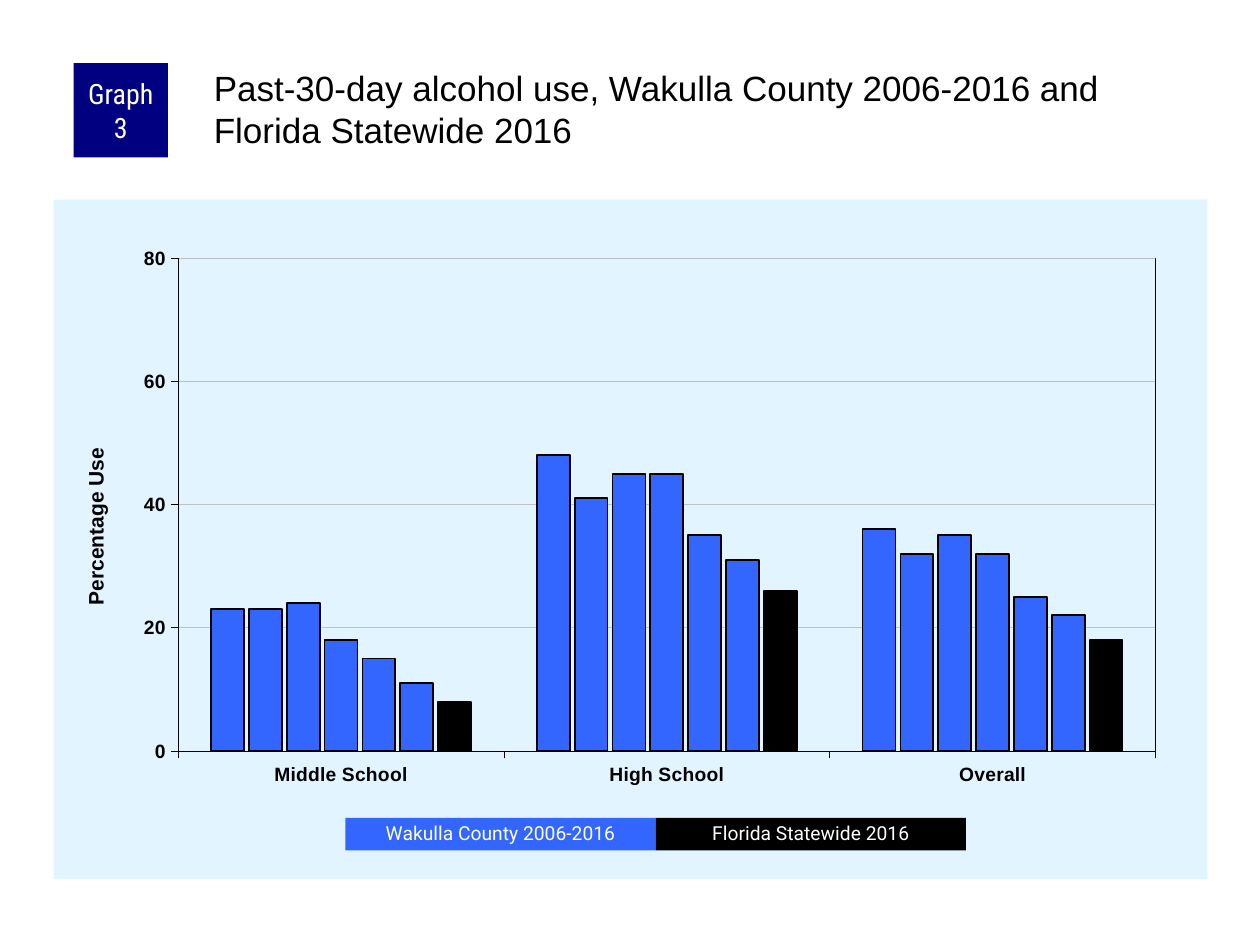
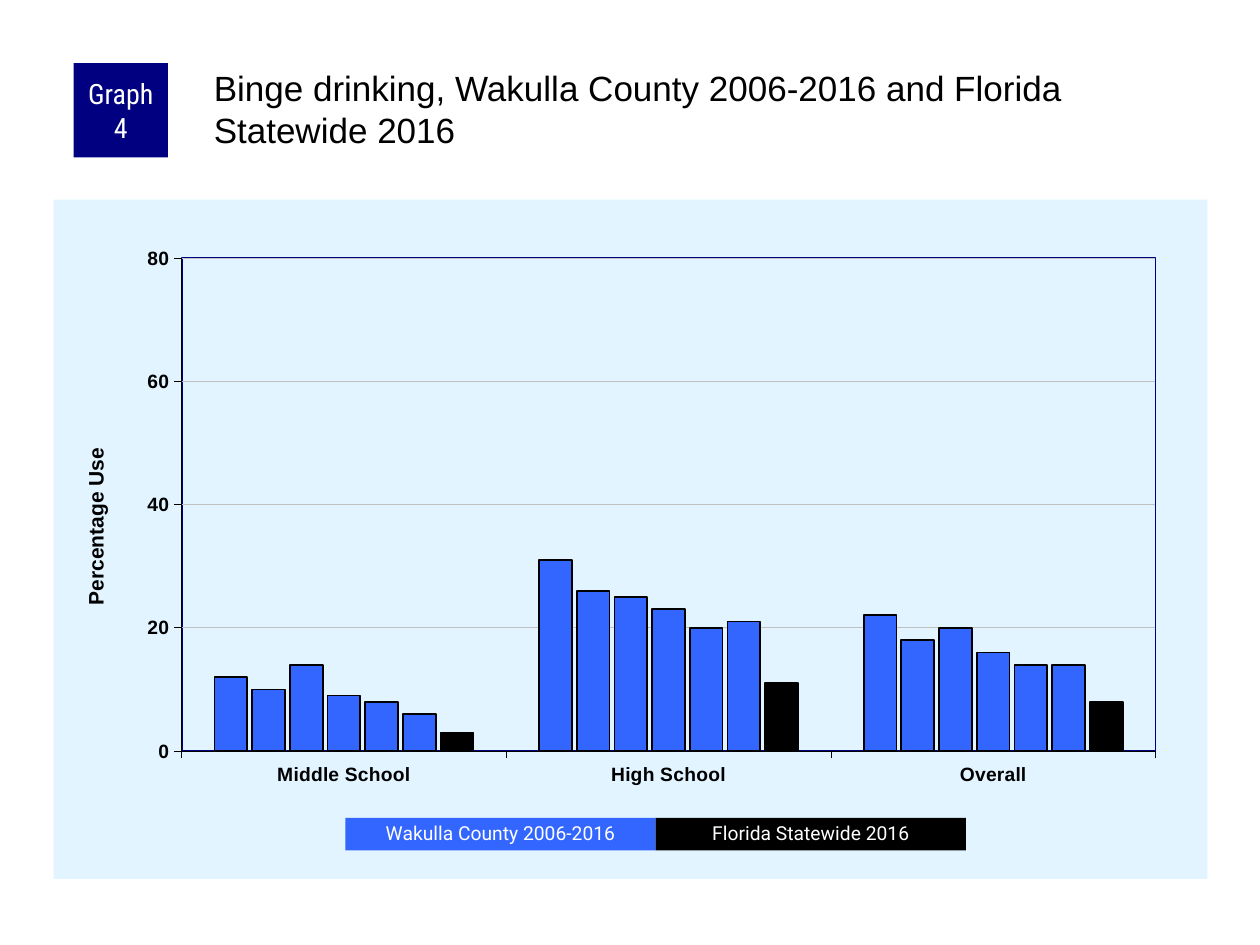
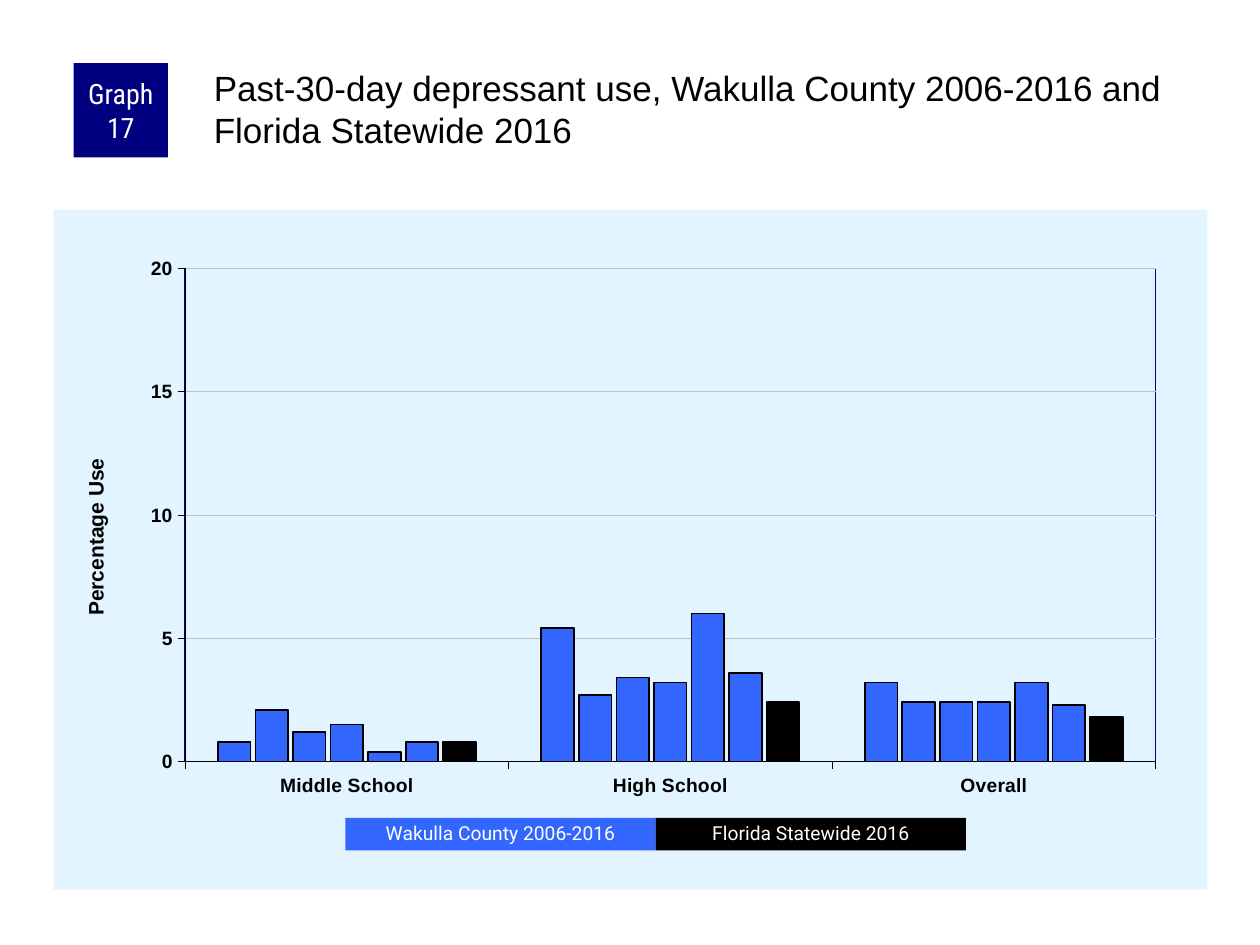
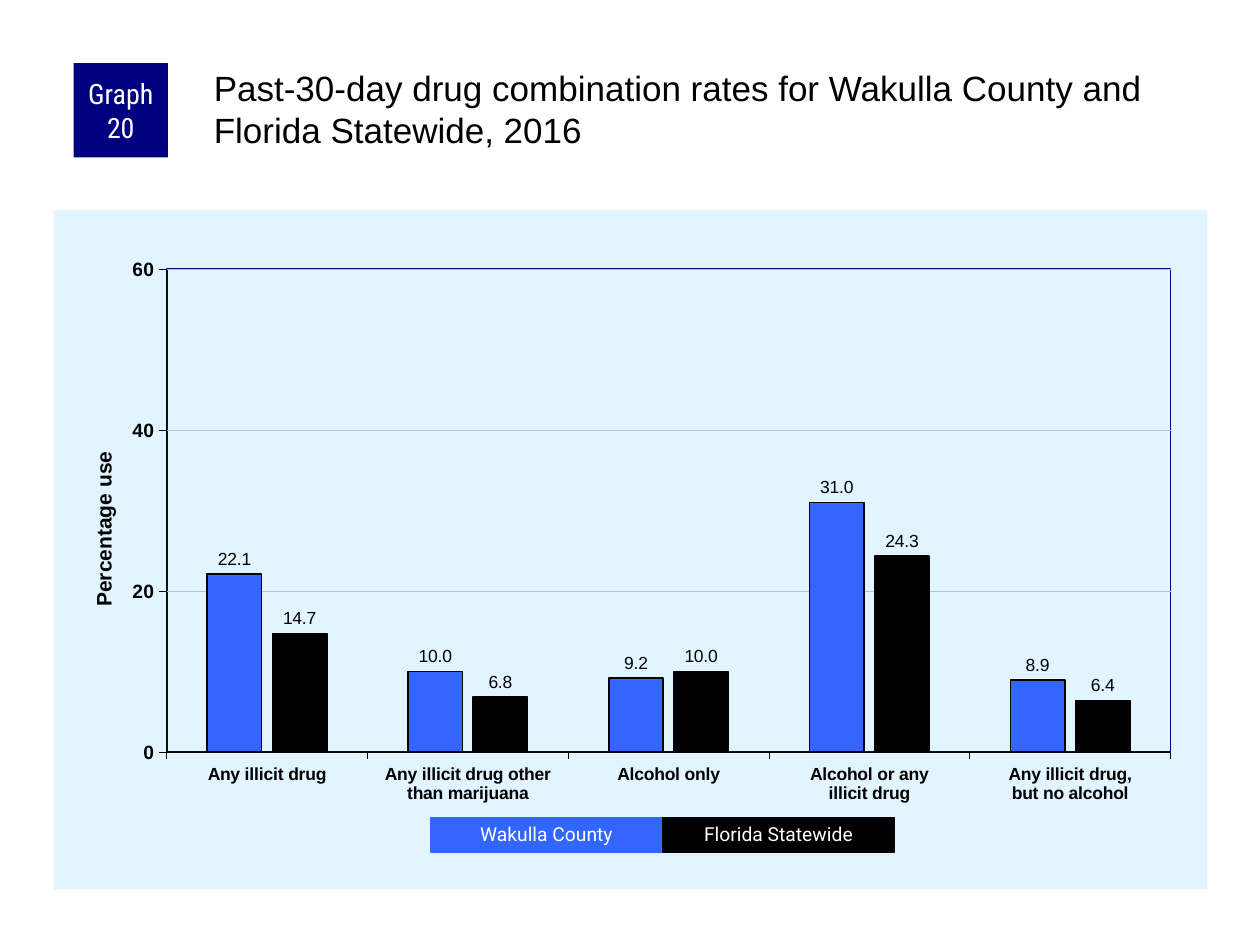
from pptx import Presentation
from pptx.chart.data import CategoryChartData
from pptx.dml.color import RGBColor
from pptx.enum.chart import XL_CHART_TYPE, XL_LABEL_POSITION, XL_TICK_MARK
from pptx.enum.shapes import MSO_SHAPE
from pptx.enum.text import MSO_ANCHOR, MSO_AUTO_SIZE, PP_ALIGN
from pptx.oxml import parse_xml
from pptx.oxml.ns import nsdecls, qn
from pptx.util import Inches, Pt

NAVY = RGBColor(0x00, 0x00, 0x80)
BLUE = RGBColor(0x33, 0x66, 0xFF)
PALE = RGBColor(0xE1, 0xF4, 0xFF)
GRAY = RGBColor(0xC0, 0xC0, 0xC0)
BLACK = RGBColor(0x00, 0x00, 0x00)
WHITE = RGBColor(0xFF, 0xFF, 0xFF)

CELL = Inches(1) / 12
SCHOOLS = ["Middle School", "High School", "Overall"]
DRUGS = ["Any illicit drug", "Any illicit drug other than marijuana", "Alcohol only",
         "Alcohol or any\nillicit drug", "Any illicit drug,\nbut no alcohol"]
TREND = dict(cats=SCHOOLS, axis="Percentage Use", spot=(0.022, 0.36), gap=200, lap=-15,
             names=("Wakulla County 2006-2016", "Florida Statewide 2016"),
             key=(32.9, 29.55, 3.1), size=11, marks=False)
PAIRS = dict(cats=DRUGS, axis="Percentage use", spot=(0.029, 0.35), gap=150, lap=-20,
             names=("Wakulla County", "Florida Statewide"),
             key=(41, 22.1, 3.25), size=10, marks=True)

GRAPHS = [
    dict(TREND, num=3, title="Past-30-day alcohol use, Wakulla County 2006-2016 and Florida Statewide 2016",
         top=19, max=80, step=20, plot=(0.108, 0.086, 0.847, 0.726), edge=(BLACK, 0.25),
         rows=[(23, 48, 36), (23, 41, 32), (24, 45, 35), (18, 45, 32),
               (15, 35, 25), (11, 31, 22), (8, 26, 18)]),
    dict(TREND, num=4, title="Binge drinking, Wakulla County 2006-2016 and Florida Statewide 2016",
         top=19, max=80, step=20, plot=(0.111, 0.086, 0.844, 0.726), edge=(NAVY, 1),
         rows=[(12, 31, 22), (10, 26, 18), (14, 25, 20), (9, 23, 16),
               (8, 20, 14), (6, 21, 14), (3, 11, 8)]),
    dict(TREND, num=17, title="Past-30-day depressant use, Wakulla County 2006-2016 and Florida Statewide 2016",
         top=20, max=20, step=5, plot=(0.114, 0.086, 0.841, 0.726), edge=(NAVY, 1),
         rows=[(0.8, 5.4, 3.2), (2.1, 2.7, 2.4), (1.2, 3.4, 2.4), (1.5, 3.2, 2.4),
               (0.4, 6, 3.2), (0.8, 3.6, 2.3), (0.8, 2.4, 1.8)]),
    dict(PAIRS, num=20, title="Past-30-day drug combination rates for Wakulla County and Florida Statewide, 2016",
         top=20, max=60, step=20, plot=(0.098, 0.087, 0.87, 0.711), edge=(NAVY, 1),
         rows=[(22.1, 10, 9.2, 31, 8.9), (14.7, 6.8, 10, 24.3, 6.4)]),
]


def box(slide, cells, fill, text, font, size):
    shape = slide.shapes.add_shape(MSO_SHAPE.RECTANGLE, *[round(n * CELL) for n in cells])
    shape.shadow.inherit = False
    shape.fill.solid()
    shape.fill.fore_color.rgb = fill
    shape.line.fill.background()
    frame = shape.text_frame
    frame.word_wrap = True
    frame.vertical_anchor = MSO_ANCHOR.MIDDLE
    para = frame.paragraphs[0]
    para.text = text
    para.alignment = PP_ALIGN.CENTER
    para.font.name, para.font.size = font, Pt(size)
    para.font.color.rgb = WHITE
    return shape


def place(node, spots, index, inner=""):
    old = node.find(qn("c:layout"))
    if old is not None:
        node.remove(old)
    parts = "".join(f'<c:{tag}Mode val="edge"/>' for tag in "xy")
    parts += "".join(f'<c:{tag} val="{val}"/>' for tag, val in zip("xywh", spots))
    node.insert(index, parse_xml(
        f'<c:layout {nsdecls("c")}><c:manualLayout>{inner}{parts}</c:manualLayout></c:layout>'))


deck = Presentation()
deck.slide_width, deck.slide_height = Inches(10), Inches(7.5)

for graph in GRAPHS:
    slide = deck.slides.add_slide(deck.slide_layouts[5])
    title = slide.shapes.title
    title.left, title.top, title.width, title.height = [round(n * CELL) for n in (20, 6, 95, 10)]
    frame = title.text_frame
    frame.text = graph["title"]
    frame.word_wrap = True
    frame.auto_size = MSO_AUTO_SIZE.NONE
    frame.vertical_anchor = MSO_ANCHOR.TOP
    frame.margin_left = frame.margin_top = Inches(0.03)
    frame.margin_right = frame.margin_bottom = 0
    para = frame.paragraphs[0]
    para.alignment = PP_ALIGN.LEFT
    para.font.name, para.font.size = "Arial", Pt(20)
    para.font.color.rgb = BLACK

    data = CategoryChartData()
    data.categories = graph["cats"]
    for num, row in enumerate(graph["rows"], 1):
        data.add_series(f"Series {num}", row)
    area = [round(n * CELL) for n in (5.1, graph["top"], 109.9, 64.7)]
    chart = slide.shapes.add_chart(XL_CHART_TYPE.COLUMN_CLUSTERED, *area, data).chart
    chart.has_legend = chart.has_title = False
    chart.font.name, chart.font.size = "Arial", Pt(8)
    chart.font.color.rgb = BLACK

    plot = chart.plots[0]
    plot.vary_by_categories = False
    plot.gap_width, plot.overlap = graph["gap"], graph["lap"]
    for num, bars in enumerate(plot.series, 1):
        bars.format.fill.solid()
        bars.format.fill.fore_color.rgb = BLACK if num == len(graph["rows"]) else BLUE
        bars.format.line.color.rgb = BLACK
        bars.format.line.width = Pt(1)
        if graph["marks"]:
            marks = bars.data_labels
            marks.show_value = True
            marks.number_format, marks.number_format_is_linked = "0.0", False
            marks.position = XL_LABEL_POSITION.OUTSIDE_END
            marks.font.name, marks.font.size = "Arial", Pt(10)
            marks.font.color.rgb = BLACK

    scale = chart.value_axis
    scale.minimum_scale, scale.maximum_scale, scale.major_unit = 0, graph["max"], graph["step"]
    for axis, size in (chart.category_axis, graph["size"]), (scale, 11):
        axis.major_tick_mark = XL_TICK_MARK.OUTSIDE
        axis.minor_tick_mark = XL_TICK_MARK.NONE
        font = axis.tick_labels.font
        font.name, font.size, font.bold = "Arial", Pt(size), True
        font.color.rgb = BLACK
        axis.format.line.color.rgb = BLACK
        axis.format.line.width = Pt(0.25)
    scale.has_major_gridlines = True
    scale.major_gridlines.format.line.color.rgb = GRAY
    scale.major_gridlines.format.line.width = Pt(0.25)

    frame = scale.axis_title.text_frame
    frame.text = graph["axis"]
    font = frame.paragraphs[0].font
    font.name, font.size, font.bold = "Arial", Pt(12), True
    font.color.rgb = BLACK
    label = scale.axis_title._element
    turn = label.find(".//" + qn("a:bodyPr"))
    turn.set("rot", "-5400000")
    turn.set("vert", "horz")
    place(label, graph["spot"], 1)

    body = chart._chartSpace.find(qn("c:chart"))
    field = body.find(qn("c:plotArea"))
    place(field, graph["plot"], 0, '<c:layoutTarget val="inner"/>')
    hue, width = graph["edge"]
    field.append(parse_xml(
        f'<c:spPr {nsdecls("c", "a")}><a:noFill/><a:ln w="{Pt(width)}">'
        f'<a:solidFill><a:srgbClr val="{hue}"/></a:solidFill></a:ln></c:spPr>'))
    body.addnext(parse_xml(
        f'<c:spPr {nsdecls("c", "a")}><a:solidFill><a:srgbClr val="{PALE}"/></a:solidFill>'
        '<a:ln><a:noFill/></a:ln></c:spPr>'))

    badge = box(slide, (7, 6, 9, 9), NAVY, f"Graph {graph['num']}", "Roboto Condensed", 16)
    frame = badge.text_frame
    frame.margin_left = frame.margin_right = Inches(0.05)
    frame.margin_top = frame.margin_bottom = 0

    left, width, height = graph["key"]
    for col, (name, hue) in enumerate(zip(graph["names"], (BLUE, BLACK))):
        key = box(slide, (left + col * width, 77.9, width, height), hue, name, "Roboto", 11)
        key.text_frame.paragraphs[0].line_spacing = 0.9
        if graph["marks"]:
            key.line.color.rgb = hue
            key.line.width = Pt(0.75)

deck.save("out.pptx")
